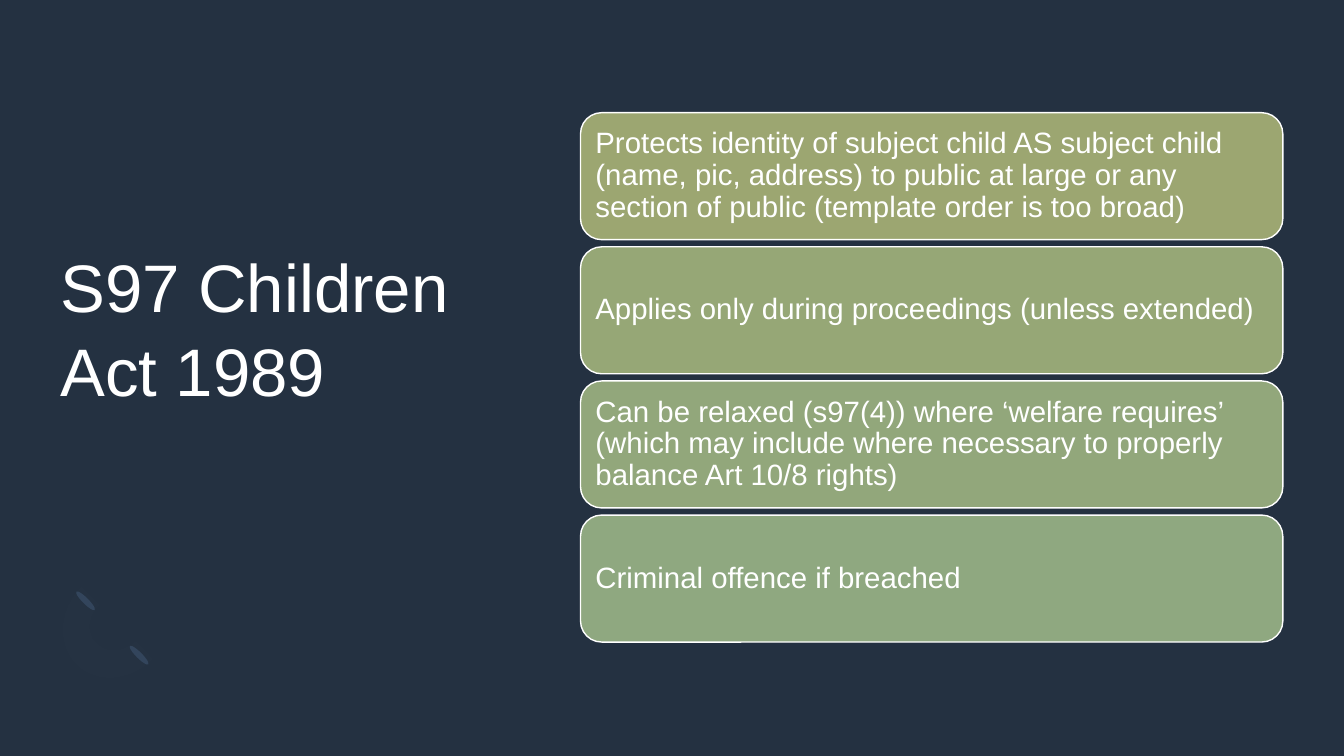
from lxml import etree
from pptx import Presentation
from pptx.dml.color import RGBColor
from pptx.enum import shapes, text
from pptx.oxml import ns
from pptx.util import Cm, Pt

NAVY = RGBColor(0x24, 0x31, 0x41)
SLATE = RGBColor(0x33, 0x45, 0x5B)
STEEL = RGBColor(0x7B, 0x96, 0xB6)
WHITE = RGBColor(0xFF, 0xFF, 0xFF)
CARDS = [
    ("Protects identity of subject child AS subject child (name, pic, address) "
     "to public at large or any section of public (template order is too broad)",
     RGBColor(0x9C, 0xA6, 0x71)),
    ("Applies only during proceedings (unless extended)",
     RGBColor(0x96, 0xA7, 0x76)),
    ("Can be relaxed (s97(4)) where ‘welfare requires’ (which may include "
     "where necessary to properly balance Art 10/8 rights)",
     RGBColor(0x92, 0xA7, 0x7B)),
    ("Criminal offence if breached", RGBColor(0x8F, 0xA8, 0x80)),
]


def write(frame, words, size, space):
    frame.word_wrap = True
    frame.auto_size = text.MSO_AUTO_SIZE.NONE
    frame.vertical_anchor = text.MSO_ANCHOR.MIDDLE
    para = frame.paragraphs[0]
    para.alignment = text.PP_ALIGN.LEFT
    para.line_spacing = space
    run = para.add_run()
    run.text = words
    run.font.size = Pt(size)
    run.font.name = "Arial"
    run.font.color.rgb = WHITE


def curve(start, one, two, end, steps=12):
    """Return points along a cubic Bezier curve, without its start."""
    points = []
    for step in range(1, steps + 1):
        t = step / steps
        parts = (1 - t) ** 3, 3 * t * (1 - t) ** 2, 3 * t * t * (1 - t), t ** 3
        points.append(tuple(sum(w * p[axis] for w, p in zip(parts, (start, one, two, end)))
                            for axis in (0, 1)))
    return points


deck = Presentation()
deck.slide_width, deck.slide_height = Cm(33.87), Cm(19.05)
slide = deck.slides.add_slide(deck.slide_layouts[5])
slide.background.fill.solid()
slide.background.fill.fore_color.rgb = NAVY

# Corner ornament: two slim ellipses and a faint open ring, in 0.01 cm
for left, top in ((3.43, 16.18), (2.08, 14.81)):
    leaf = slide.shapes.add_shape(shapes.MSO_SHAPE.OVAL, Cm(left), Cm(top), Cm(0.15), Cm(0.66))
    leaf.rotation = 135
    leaf.shadow.inherit = False
    leaf.fill.solid()
    leaf.fill.fore_color.rgb = SLATE
    leaf.line.fill.background()

outer = curve((193, 1674), (142, 1623), (147, 1537), (206, 1478))
inner = curve((251, 1524), (221, 1552), (218, 1598), (244, 1621))
inner += curve((244, 1621), (269, 1646), (312, 1643), (343, 1615))
close = curve((386, 1661), (330, 1717), (241, 1725), (193, 1674))
pen = slide.shapes.build_freeform(193, 1674, scale=Cm(0.01))
pen.add_line_segments(outer + [(251, 1524)] + inner + [(386, 1661)] + close)
ring = pen.convert_to_shape()
ring.shadow.inherit = False
ring.fill.solid()
ring.fill.fore_color.rgb = STEEL
ring.line.fill.background()
tint = ring.fill._xPr.find(".//" + ns.qn("a:srgbClr"))
etree.SubElement(tint, ns.qn("a:alpha"), val="1000")

title = slide.shapes.title
title.left, title.top, title.width, title.height = Cm(1.52), Cm(1.52), Cm(9.9), Cm(15.4)
frame = title.text_frame
frame.margin_left = frame.margin_top = frame.margin_right = 0
frame.margin_bottom = Cm(2)
write(frame, "S97 Children Act 1989", 48, 1.04)

for row, (words, color) in enumerate(CARDS):
    card = slide.shapes.add_shape(shapes.MSO_SHAPE.ROUNDED_RECTANGLE,
                                  Cm(14.63), Cm(2.84 + 3.38 * row), Cm(17.7), Cm(3.2))
    card.shadow.inherit = False
    card.fill.solid()
    card.fill.fore_color.rgb = color
    card.line.color.rgb = WHITE
    card.line.width = Pt(1)
    frame = card.text_frame
    frame.margin_left = frame.margin_top = frame.margin_right = frame.margin_bottom = Cm(0.22)
    write(frame, words, 21, 0.9)

deck.save("out.pptx")
